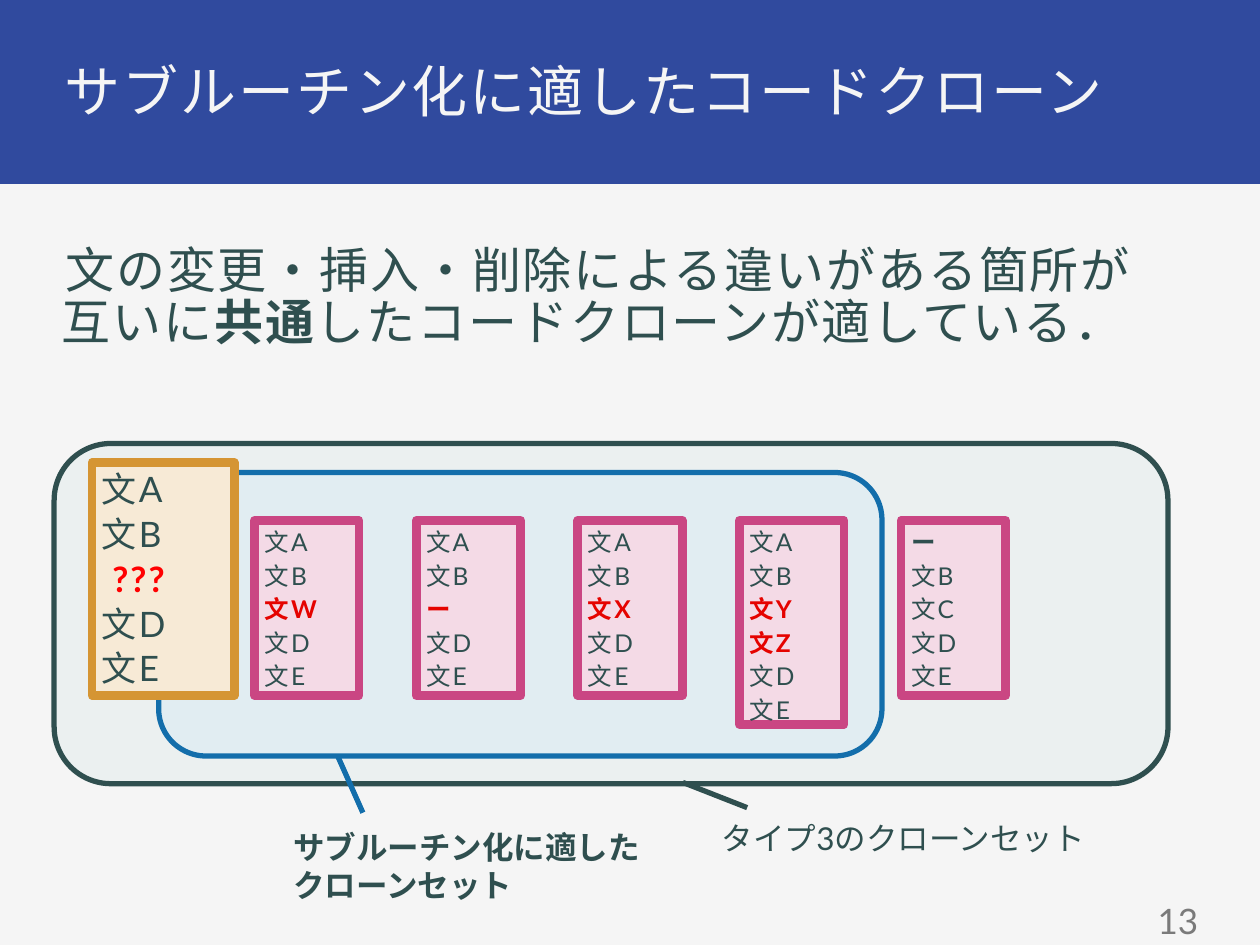
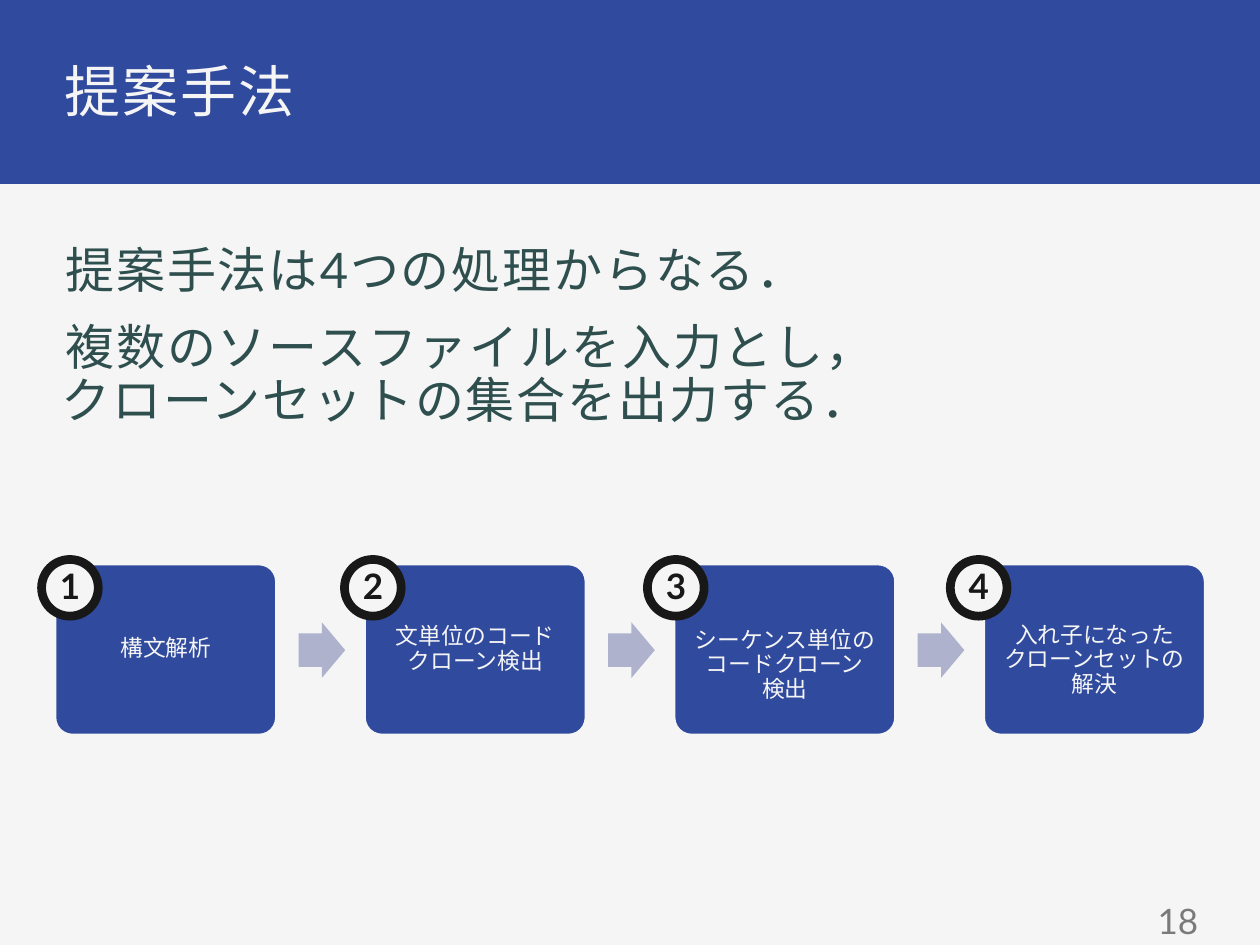
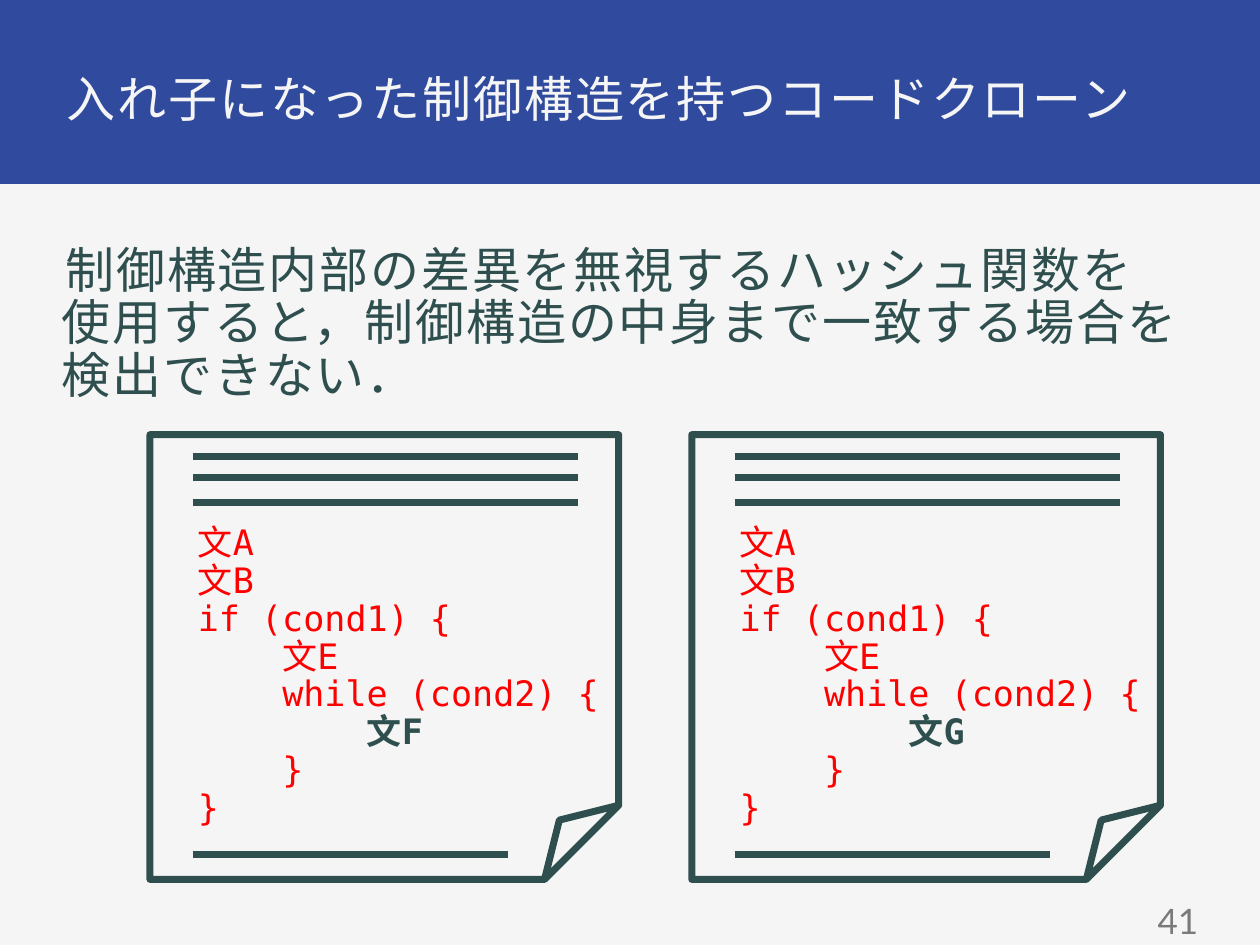
from lxml.etree import SubElement
from pptx import Presentation
from pptx.dml.color import RGBColor
from pptx.enum.shapes import MSO_CONNECTOR as Line, MSO_SHAPE as Shape
from pptx.enum.text import MSO_ANCHOR as Anchor, PP_ALIGN as Align
from pptx.oxml.ns import qn
from pptx.util import Inches, Pt

# Shared look
PAPER, BLUE, SLATE, GREY = "F5F5F5", "304A9E", "2F4F4F", "7A7A7A"
ACCENT, RED, ALERT, INK = "136EAB", "FF0000", "E50300", "181818"
SANS, MONO = "Lato", "DejaVu Sans Mono"
CODE_INDENT = 0.67

TITLE = dict(size=32, color=PAPER, spc=110)
BODY = dict(size=28, color=SLATE, spc=110)
LABEL = dict(size=18, color=SLATE)
STATEMENT = dict(color=SLATE, spc=110)
STATEMENT_PARA = dict(line_spacing=0.9, space_before=Pt(3), space_after=Pt(1))

prs = Presentation()
prs.slide_width, prs.slide_height = Inches(10), Inches(7.5)
COL, ROW = prs.slide_width / 100, prs.slide_height / 75


def rgb(value):
    return RGBColor.from_string(value)


def place(x, y, w, h):
    """Turn columns and rows into slide lengths."""
    return [round(v) for v in (x * COL, y * ROW, w * COL, h * ROW)]


def set_attrs(obj, values):
    for name, value in values.items():
        setattr(obj, name, value)


def add_run(p, text, size=18, color=SLATE, bold=False, font=SANS, spc=0):
    """Add text to a paragraph, with a line break at each newline."""
    for i, part in enumerate(text.split("\n")):
        if i:
            p.add_line_break()
        if part:
            r = p.add_run()
            r.text = part
            set_attrs(r.font, dict(name=font, size=Pt(size), bold=bold))
            r.font.color.rgb = rgb(color)
            if spc:
                r._r.get_or_add_rPr().set("spc", str(spc))


def write(sp, paras, style, para=None, inset=0.08, anchor=Anchor.TOP):
    """Fill a shape; each paragraph is a list of (text, overrides) runs."""
    tf = sp.text_frame
    set_attrs(tf, dict(word_wrap=True, vertical_anchor=anchor))
    set_attrs(tf, {f"margin_{side}": Inches(inset)
                   for side in ("left", "top", "right", "bottom")})
    for i, runs in enumerate(paras):
        p = tf.paragraphs[0] if i == 0 else tf.add_paragraph()
        set_attrs(p, {"alignment": Align.LEFT, **(para or {})})
        for text, changes in runs:
            add_run(p, text, **{**style, **changes})
    return tf


def add_text(s, at, paras, style, **layout):
    return write(s.shapes.add_textbox(*place(*at)), paras, style, **layout)


def add_box(s, kind, at, fill=None, line=None, width=1, alpha=None, adj=()):
    sp = s.shapes.add_shape(kind, *place(*at))
    sp.shadow.inherit = False
    for i, value in enumerate(adj):
        sp.adjustments[i] = value
    if fill:
        sp.fill.solid()
        sp.fill.fore_color.rgb = rgb(fill)
        if alpha:
            clr = sp._element.spPr.find(".//" + qn("a:srgbClr"))
            SubElement(clr, qn("a:alpha"), val=str(alpha * 1000))
    else:
        sp.fill.background()
    if line:
        sp.line.color.rgb = rgb(line)
        sp.line.width = Pt(width)
    else:
        sp.line.fill.background()
    return sp


def add_line(s, x1, y1, x2, y2, color=SLATE, width=3):
    c = s.shapes.add_connector(Line.STRAIGHT, *place(x1, y1, x2, y2))
    c.line.color.rgb = rgb(color)
    c.line.width = Pt(width)
    SubElement(c._element.spPr, qn("a:effectLst"))


def add_slide(title, number, body, title_at=(4.3, 4.3), title_size=32):
    """Start a slide with its band, title, body text and page number."""
    s = prs.slides.add_slide(prs.slide_layouts[6])
    s.background.fill.solid()
    s.background.fill.fore_color.rgb = rgb(PAPER)
    add_box(s, Shape.RECTANGLE, (0, 0, 100, 14.6), fill=BLUE)
    add_text(s, (*title_at, 91.3, 5.9), [[(title, {})]],
             {**TITLE, "size": title_size},
             para=dict(line_spacing=0.9, space_before=Pt(16)))
    tf = add_text(s, (4.3, 18.9, 91.3, 51.8), body, BODY, inset=0.06,
                  para=dict(line_spacing=0.9, space_before=Pt(14)))
    for p in tf.paragraphs:
        p._p.get_or_add_pPr().set("indent", str(Inches(0.03)))
    add_text(s, (73.2, 71.1, 22.5, 3.9), [[(str(number), {})]],
             dict(size=20, color=GREY), inset=0.06, anchor=Anchor.MIDDLE,
             para=dict(alignment=Align.RIGHT))
    return s


def add_fragment(s, at, statements, marked, size, fill, line, mark):
    """A code fragment; the statements whose index is in marked stand out."""
    sp = add_box(s, Shape.RECTANGLE, at, fill, line, 5)
    paras = [[(text, dict(color=mark, bold=True) if i in marked else {})]
             for i, text in enumerate(statements)]
    write(sp, paras, {**STATEMENT, "size": size}, para=STATEMENT_PARA)


def add_step(s, number, text, x, badge_x, drop):
    """A step of the method; drop lowers its text by half that many inches."""
    sp = add_box(s, Shape.ROUNDED_RECTANGLE, (x, 44.8, 17.5, 13.5),
                 BLUE, PAPER, adj=[0.1])
    tf = write(sp, [[(text, {})]], dict(size=13, color=PAPER), inset=0.05,
               para=dict(alignment=Align.CENTER, line_spacing=0.9),
               anchor=Anchor.MIDDLE)
    tf.margin_top = Inches(0.05 + drop)
    badge = add_box(s, Shape.OVAL, (badge_x, 44.4, 4.5, 4.5), PAPER, INK, 5)
    write(badge, [[(str(number), {})]],
          dict(size=20, color=INK, bold=True, spc=110),
          para=STATEMENT_PARA, anchor=Anchor.MIDDLE)


def add_source_file(s, x, inner):
    """A sheet of code whose innermost statement is given."""
    code = [(0, "文A"), (0, "文B"), (0, "if (cond1) {"), (1, "文E"),
            (1, "while (cond2) {"), (2, inner), (1, "}"), (0, "}")]
    paras = [[(text, dict(color=SLATE, bold=True) if text == inner else {})]
             for _, text in code]
    tf = add_text(s, (x + 3, 40.9, 33.5, 25.1), paras,
                  dict(size=20, color=RED, font=MONO),
                  para=dict(line_spacing=0.9))
    for p, (level, _) in zip(tf.paragraphs, code):
        p._p.get_or_add_pPr().set("marL", str(Inches(level * CODE_INDENT)))
    add_box(s, Shape.FOLDED_CORNER, (x, 34.5, 37.2, 35.3), line=SLATE, width=4)
    for y, length in ((36.2, 30.6), (37.9, 30.6), (39.9, 30.6), (67.8, 25)):
        add_line(s, x + 3.4, y, x + 3.4 + length, y, width=4)


def clone_slide():
    s = add_slide("サブルーチン化に適したコードクローン", 13,
                  [[("文の変更・挿入・削除による違いがある箇所が\n互いに", {}),
                    ("共通", dict(bold=True)),
                    ("したコードクローンが適している．", {})]])
    # Nested clone sets with their labels
    add_box(s, Shape.ROUNDED_RECTANGLE, (4.3, 35.2, 88.4, 27),
            "CFE2E2", SLATE, 3, alpha=26)
    add_box(s, Shape.ROUNDED_RECTANGLE, (12.6, 37.5, 57.4, 22.5),
            "C5E4F9", ACCENT, 3, alpha=24)
    add_line(s, 54.2, 62.1, 59.3, 64.1)
    label = add_text(s, (56.3, 64.5, 31.2, 4), [[("タイプ3のクローンセット", {})]],
                     LABEL, inset=0.1)
    add_line(s, 26.8, 60, 28.8, 64.5, ACCENT)
    bold_label = add_text(s, (22.3, 65.2, 29.8, 7.1),
                          [[("サブルーチン化に適した", {})], [("クローンセット", {})]],
                          {**LABEL, "bold": True}, inset=0.1)
    for tf in (label, bold_label):
        set_attrs(tf, dict(margin_top=Inches(0.05), margin_bottom=Inches(0.05)))
    # Common pattern, then the fragments
    add_fragment(s, (7.3, 36.7, 11.3, 18.5), ["文A", "文B", " ???", "文D", "文E"],
                 {2}, 20, "F7EAD6", "D59533", RED)
    fragments = [
        (["文A", "文B", "文W", "文D", "文E"], {2}, ALERT),
        (["文A", "文B", "ー", "文D", "文E"], {2}, ALERT),
        (["文A", "文B", "文X", "文D", "文E"], {2}, ALERT),
        (["文A", "文B", "文Y", "文Z", "文D", "文E"], {2, 3}, ALERT),
        (["ー", "文B", "文C", "文D", "文E"], {0}, SLATE),
    ]
    for i, (statements, marked, mark) in enumerate(fragments):
        height = 13.9 + 2.3 * (len(statements) - 5)
        add_fragment(s, (20.2 + 12.83 * i, 41.3, 8.3, height), statements,
                     marked, 14, "F4DAE6", "CA4683", mark)


def method_slide():
    s = add_slide("提案手法", 18,
                  [[("提案手法は4つの処理からなる．", {})],
                   [("複数のソースファイルを入力とし，\n"
                     "クローンセットの集合を出力する．", {})]])
    steps = [("構文解析", 0), ("文単位のコード\nクローン検出", 0),
             ("シーケンス単位の\nコードクローン\n検出", 0.25),
             ("入れ子になった\nクローンセットの\n解決", 0.17)]
    for i, (text, drop) in enumerate(steps):
        x = 4.4 + 24.57 * i
        add_step(s, i + 1, text, x, 3.3 + 24.04 * i, drop)
        if i < len(steps) - 1:
            add_box(s, Shape.RIGHT_ARROW, (x + 19.3, 49.4, 3.7, 4.4),
                    "AEB2CC", adj=[0.6, 0.5])


def nesting_slide():
    s = add_slide("入れ子になった制御構造を持つコードクローン", 41,
                  [[("制御構造内部の差異を無視するハッシュ関数を\n"
                     "使用すると，制御構造の中身まで一致する場合を\n"
                     "検出できない．", {})]],
                  title_at=(4.5, 5.2), title_size=28)
    for i, inner in enumerate(("文F", "文G")):
        add_source_file(s, 11.9 + 43 * i, inner)


def main():
    clone_slide()
    method_slide()
    nesting_slide()
    prs.save("out.pptx")


if __name__ == "__main__":
    main()
